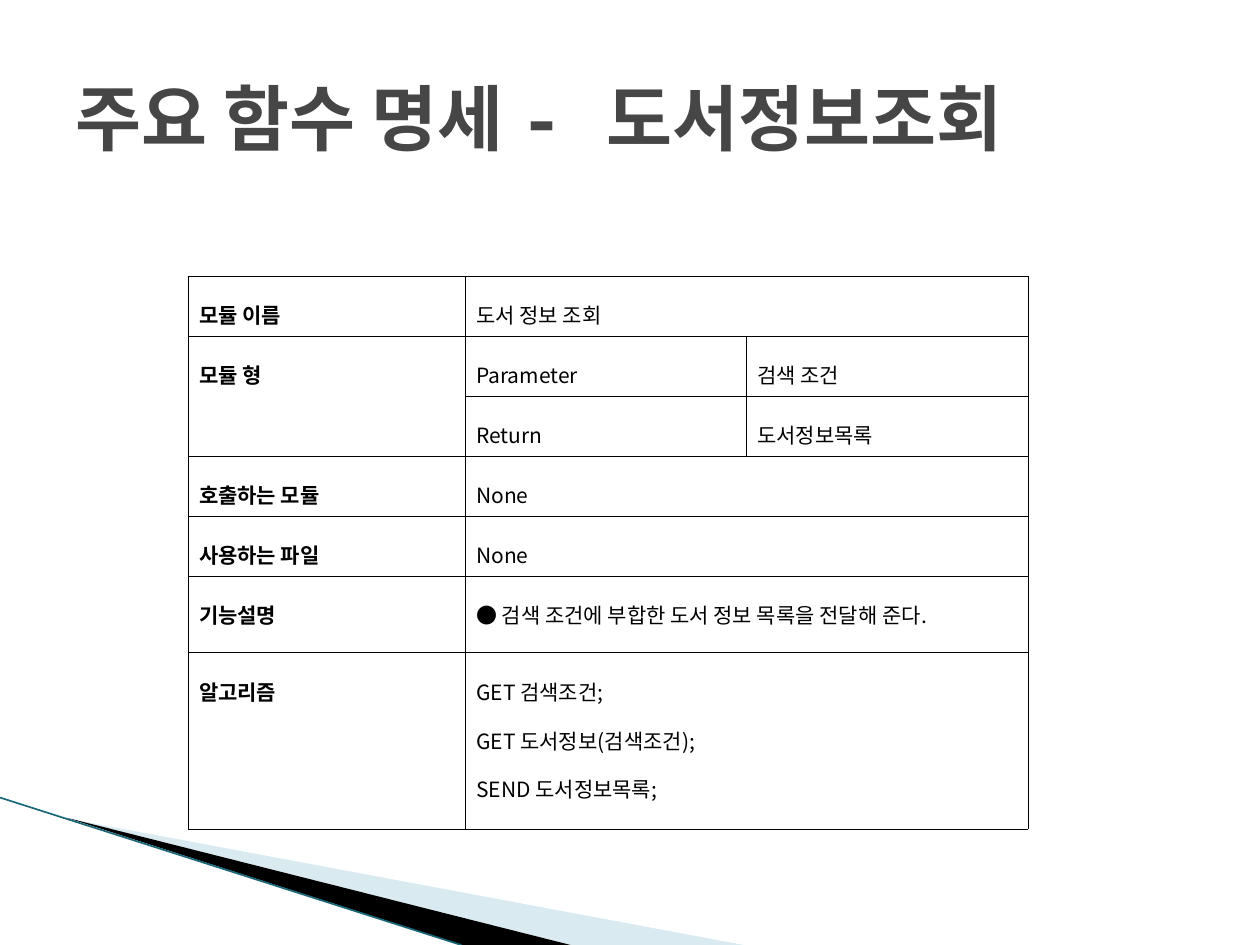
from lxml import etree
from pptx import Presentation
from pptx.dml.color import RGBColor
from pptx.enum.shapes import MSO_CONNECTOR
from pptx.enum.text import MSO_ANCHOR, PP_ALIGN
from pptx.oxml.ns import qn
from pptx.util import Inches, Pt

BODY_FONT = "Noto Sans CJK KR"
TITLE_FONT = "Noto Sans Mono"
COLUMNS = [2.2, 2.23, 2.24]
ROWS = [2.38 / 5] * 5 + [0.61, 1.4]
# (row, column, rows spanned, columns spanned, lines)
ENTRIES = [
    (0, 0, 1, 1, ["모듈 이름"]),
    (0, 1, 1, 2, ["도서 정보 조회"]),
    (1, 0, 2, 1, ["모듈 형"]),
    (1, 1, 1, 1, ["Parameter"]),
    (1, 2, 1, 1, ["검색 조건"]),
    (2, 1, 1, 1, ["Return"]),
    (2, 2, 1, 1, ["도서정보목록"]),
    (3, 0, 1, 1, ["호출하는 모듈"]),
    (3, 1, 1, 2, ["None"]),
    (4, 0, 1, 1, ["사용하는 파일"]),
    (4, 1, 1, 2, ["None"]),
    (5, 0, 1, 1, ["기능설명"]),
    (5, 1, 1, 2, ["● 검색 조건에 부합한 도서 정보 목록을 전달해 준다."]),
    (6, 0, 1, 1, ["알고리즘"]),
    (6, 1, 1, 2, ["GET 검색조건;", "GET 도서정보(검색조건);", "SEND 도서정보목록;"]),
]


def color(value):
    return RGBColor.from_string(value)


def write(frame, lines, size=12, font=BODY_FONT, fill="000000", bold=False,
          align=PP_ALIGN.LEFT, spacing=None):
    frame.word_wrap = True
    for index, line in enumerate(lines):
        paragraph = frame.paragraphs[0] if index == 0 else frame.add_paragraph()
        paragraph.alignment = align
        paragraph.line_spacing = spacing
        run = paragraph.add_run()
        run.text = line
        run.font.size = Pt(size)
        run.font.bold = bold
        run.font.name = font
        run.font.color.rgb = color(fill)


def add_wedge(slide, points, fill, opacity=100):
    corners = [(Inches(x), Inches(y)) for x, y in points]
    builder = slide.shapes.build_freeform(*corners[0])
    builder.add_line_segments(corners[1:], close=True)
    wedge = builder.convert_to_shape()
    wedge.shadow.inherit = False
    wedge.line.fill.background()
    wedge.fill.solid()
    wedge.fill.fore_color.rgb = color(fill)
    if opacity < 100:
        tint = wedge._element.spPr.find(qn("a:solidFill"))[0]
        etree.SubElement(tint, qn("a:alpha")).set("val", str(opacity * 1000))


def add_corner_sweep(slide, left, top, width, height):
    """Two wedges and an edge line fanning out to the bottom of the box."""
    bottom = top + height
    add_wedge(slide, [(left + 0.55, top + 0.17), (left + width, bottom),
                      (left + 4.53, bottom)], "A0CBDC", opacity=40)
    add_wedge(slide, [(left + 0.53, top + 0.16), (left + 4.53, bottom),
                      (left + 3.67, bottom)], "000000")
    edge = slide.shapes.add_connector(
        MSO_CONNECTOR.STRAIGHT, Inches(left), Inches(top),
        Inches(left + 3.66), Inches(bottom))
    edge.line.color.rgb = color("17697A")
    edge.line.width = Pt(0.95)
    etree.SubElement(edge._element.spPr, qn("a:effectLst"))


def add_title(slide, left, top, width, height):
    title = slide.shapes.add_textbox(*map(Inches, (left, top, width, height)))
    title.text_frame.vertical_anchor = MSO_ANCHOR.MIDDLE
    write(title.text_frame, ["주요 함수 명세 - 도서정보조회"], size=41,
          font=TITLE_FONT, fill="464646", bold=True)


def set_borders(cell, value, width):
    properties = cell._tc.get_or_add_tcPr()
    for index, side in enumerate(("a:lnL", "a:lnR", "a:lnT", "a:lnB")):
        border = etree.Element(qn(side), w=str(Pt(width)))
        solid = etree.SubElement(border, qn("a:solidFill"))
        etree.SubElement(solid, qn("a:srgbClr")).set("val", value)
        properties.insert(index, border)


def add_module_table(slide, left, top, width, height):
    table = slide.shapes.add_table(
        len(ROWS), len(COLUMNS),
        *map(Inches, (left, top, width, height))).table
    table.first_row = table.horz_banding = False
    for column, size in zip(table.columns, COLUMNS):
        column.width = Inches(size)
    for row, size in zip(table.rows, ROWS):
        row.height = Inches(size)
    for cell in table.iter_cells():
        cell.fill.background()
        set_borders(cell, "000000", 0.25)
        cell.margin_left = cell.margin_right = Inches(0.09)
        cell.margin_top = cell.margin_bottom = Inches(0.04)
    for row, column, row_span, column_span, lines in ENTRIES:
        cell = table.cell(row, column)
        if row_span * column_span > 1:
            cell.merge(table.cell(row + row_span - 1, column + column_span - 1))
        write(cell.text_frame, lines, bold=column == 0,
              align=PP_ALIGN.JUSTIFY, spacing=1.6)


def main():
    deck = Presentation()
    deck.slide_width, deck.slide_height = Inches(10), Inches(7.5)
    slide = deck.slides.add_slide(deck.slide_layouts[6])
    add_corner_sweep(slide, 0, 6.33, 5.9, 1.17)
    add_title(slide, 0.5, 0.3, 9, 1.25)
    add_module_table(slide, 1.49, 2.19, sum(COLUMNS), sum(ROWS))
    deck.save("out.pptx")


if __name__ == "__main__":
    main()
